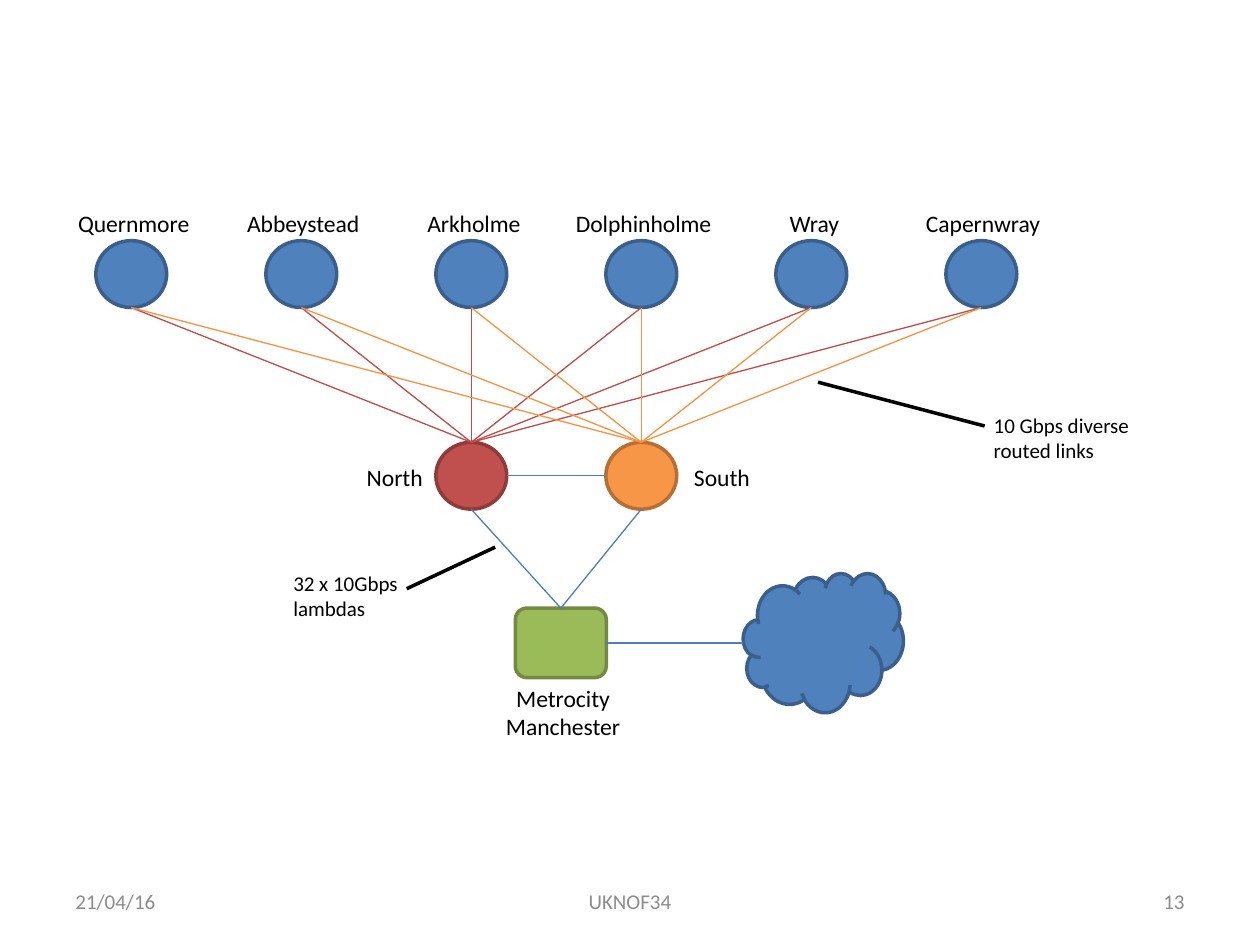
"""Builds a network diagram of six villages linked to two hubs and an exchange."""
from dataclasses import dataclass

from lxml.etree import SubElement
from pptx import Presentation
from pptx.dml.color import RGBColor
from pptx.enum.shapes import MSO_CONNECTOR, MSO_SHAPE
from pptx.enum.text import MSO_ANCHOR, MSO_AUTO_SIZE, PP_ALIGN
from pptx.oxml.ns import qn
from pptx.util import Pt


@dataclass(frozen=True)
class Theme:
    font: str = "Calibri"
    label: float = 13.5
    small: float = 12
    thin: float = 0.75
    thick: float = 2
    ink: str = "000000"
    paper: str = "FFFFFF"
    muted: str = "8C8C8C"
    link: str = "4B7EBC"
    blue: tuple = ("4F81BD", "3A5F8C")
    red: tuple = ("C0504D", "8E3B39")
    amber: tuple = ("F79646", "B76F34")
    green: tuple = ("9BBB59", "738A42")
    north: str = "BF4C48"
    south: str = "F69240"


class Canvas:
    def __init__(self, slide, theme):
        self.slide = slide
        self.theme = theme

    def shape(self, kind, box, paint):
        item = self.slide.shapes.add_shape(kind, *map(Pt, box))
        item.shadow.inherit = False
        fill, edge = paint
        item.fill.solid()
        item.fill.fore_color.rgb = RGBColor.from_string(fill)
        item.line.color.rgb = RGBColor.from_string(edge)
        item.line.width = Pt(self.theme.thick)
        return item

    def line(self, start, end, color):
        item = self.slide.shapes.add_connector(
            MSO_CONNECTOR.STRAIGHT, *map(Pt, (*start, *end)))
        item.line.color.rgb = RGBColor.from_string(color)
        item.line.width = Pt(self.theme.thin)
        SubElement(item._element.spPr, qn("a:effectLst"))

    def letter(self, frame, text, size, color, align):
        frame.text = text
        for para in frame.paragraphs:
            para.alignment = align
            para.font.name = self.theme.font
            para.font.size = Pt(size)
            para.font.color.rgb = RGBColor.from_string(color)

    def label(self, text, box, align=PP_ALIGN.LEFT):
        frame = self.slide.shapes.add_textbox(*map(Pt, box)).text_frame
        frame.word_wrap = False
        frame.auto_size = MSO_AUTO_SIZE.SHAPE_TO_FIT_TEXT
        self.letter(frame, text, self.theme.label, self.theme.ink, align)

    def footer(self, text, left, width, align):
        box = (left, 500.5, width, 28.75)
        frame = self.slide.shapes.add_textbox(*map(Pt, box)).text_frame
        frame.word_wrap = True
        frame.vertical_anchor = MSO_ANCHOR.MIDDLE
        self.letter(frame, text, self.theme.small, self.theme.muted, align)

    def callout(self, text, left, top, bends):
        item = self.shape(MSO_SHAPE.LINE_CALLOUT_1_NO_BORDER,
                          (left, top, 97.2, 42.5),
                          (self.theme.paper, self.theme.ink))
        for i, bend in enumerate(bends):
            item.adjustments[i] = bend
        frame = item.text_frame
        frame.word_wrap = True
        frame.vertical_anchor = MSO_ANCHOR.MIDDLE
        self.letter(frame, text, self.theme.small, self.theme.ink,
                    PP_ALIGN.LEFT)


def main():
    deck = Presentation()
    deck.slide_width, deck.slide_height = Pt(720), Pt(540)
    theme = Theme()
    art = Canvas(deck.slides.add_slide(deck.slide_layouts[6]), theme)

    wide, high = 40.5, 38.25
    first, step = 75, 97.15
    row, hub = 137.5, 252.75
    sites = [("Quernmore", 79), ("Abbeystead", 80), ("Arkholme", 68.5),
             ("Dolphinholme", 93), ("Wray", 43), ("Capernwray", 81.5)]
    mids = [first + i * step for i in range(len(sites))]
    north, south = mids[2:4]
    hubs = [(north, theme.red, theme.north), (south, theme.amber, theme.south)]
    gate = (294.5, 347.5, 52, 39.75)
    peak = (gate[0] + gate[2] / 2, gate[1])
    axis = gate[1] + gate[3] / 2

    for mid in mids:
        art.shape(MSO_SHAPE.OVAL, (mid - wide / 2, row, wide, high), theme.blue)
    for mid, paint, _ in hubs:
        art.shape(MSO_SHAPE.OVAL, (mid - wide / 2, hub, wide, high), paint)
    for end, _, color in hubs:
        for mid in mids:
            art.line((mid, row + high), (end, hub), color)

    art.shape(MSO_SHAPE.ROUNDED_RECTANGLE, gate, theme.green)
    for mid, _, _ in hubs:
        art.line((mid, hub + high), peak, theme.link)
    level = hub + high / 2
    art.line((north + wide / 2, level), (south - wide / 2, level), theme.link)
    art.shape(MSO_SHAPE.CLOUD, (424.75, 327.5, 91.5, 79.5), theme.blue)
    art.line((gate[0] + gate[2], axis), (424.75, axis), theme.link)

    for (name, width), mid in zip(sites, mids):
        art.label(name, (mid + 2 - width / 2, 116, width, 24))
    art.label("North", (202.5, 260.75, 47, 24))
    art.label("South", (389.5, 260.75, 47, 24))
    art.label("Metrocity\nManchester", (281.5, 387.25, 80.5, 40.5),
              PP_ALIGN.CENTER)

    art.callout("10 Gbps diverse routed links", 560.75, 229,
                (0.34, 0.02, -0.25, -0.96))
    art.callout("32 x 10Gbps lambdas", 160.5, 319,
                (0.41, 0.74, -0.15, 1.26))

    art.footer("13", 516, 168, PP_ALIGN.RIGHT)
    art.footer("21/04/16", 36, 168, PP_ALIGN.LEFT)
    art.footer("UKNOF34", 246, 228, PP_ALIGN.CENTER)
    deck.save("out.pptx")


if __name__ == "__main__":
    main()
